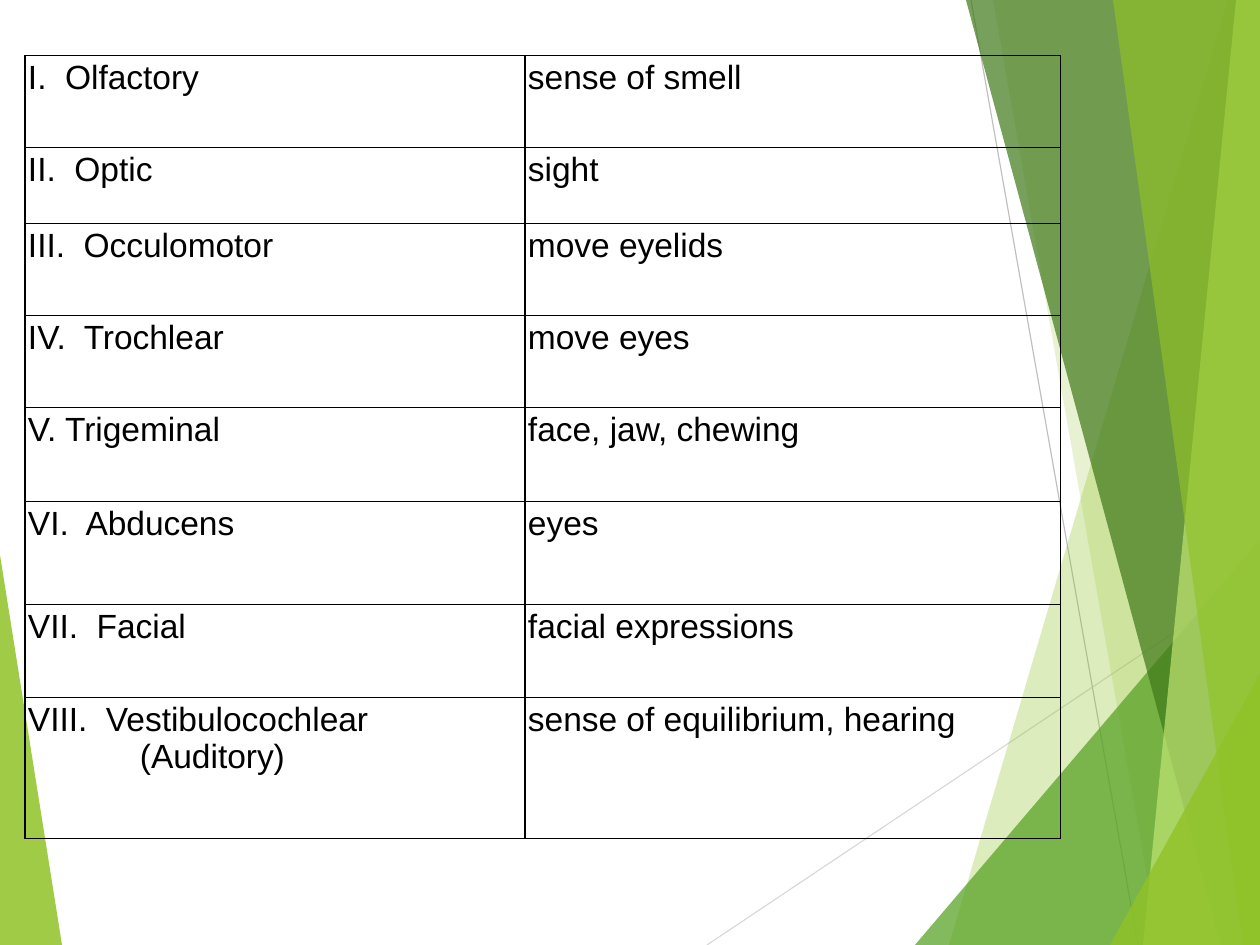
from lxml import etree
from pptx import Presentation
from pptx.dml.color import RGBColor
from pptx.enum.shapes import MSO_CONNECTOR
from pptx.oxml import parse_xml
from pptx.oxml.ns import nsdecls, qn
from pptx.util import Pt

PX = 8064  # EMU per px
WIDTH, HEIGHT = 1260, 945
STRAIGHT = MSO_CONNECTOR.STRAIGHT

BLACK = RGBColor(0x00, 0x00, 0x00)
LIME = RGBColor(0x90, 0xC2, 0x26)
GREEN = RGBColor(0x54, 0xA0, 0x21)
DARK_GREEN = RGBColor(0x3F, 0x78, 0x19)
PALE_LIME = RGBColor(0xC0, 0xE4, 0x74)
LIGHT_GRAY = RGBColor(0xD9, 0xD9, 0xD9)
GRAY = RGBColor(0xBF, 0xBF, 0xBF)

prs = Presentation()
prs.slide_width = WIDTH * PX
prs.slide_height = HEIGHT * PX
slide = prs.slides.add_slide(prs.slide_layouts[6])


def add_facet(corners, color, opacity):
    """Draw a see-through polygon; opacity is in percent."""
    builder = slide.shapes.build_freeform(*corners[0], scale=PX)
    builder.add_line_segments(corners[1:], close=True)
    facet = builder.convert_to_shape()
    facet.shadow.inherit = False
    facet.line.fill.background()
    facet.fill.solid()
    facet.fill.fore_color.rgb = color
    rgb = facet.fill._xPr.find(".//" + qn("a:srgbClr"))
    etree.SubElement(rgb, qn("a:alpha")).set("val", str(opacity * 1000))


# Background facets and hairlines
add_facet([(0, 555), (62, HEIGHT), (0, HEIGHT)], LIME, 85)

for start, end, color in [
    ((707, 945), (1260, 575), LIGHT_GRAY),
    ((971, 0), (1138, 945), GRAY),
]:
    hairline = slide.shapes.add_connector(
        STRAIGHT, *(v * PX for v in start + end))
    hairline.line.color.rgb = color
    hairline.line.width = Pt(0.75)
    etree.SubElement(hairline._element.spPr, qn("a:effectLst"))

# Each facet runs from its left edge to the right side of the slide
for top, bottom, color, opacity in [
    ((1228, 0), (949, HEIGHT), LIME, 30),
    ((993, 0), (1159, HEIGHT), LIME, 20),
    ((WIDTH, 540), (915, HEIGHT), GREEN, 72),
    ((966, 0), (1221, HEIGHT), DARK_GREEN, 70),
    ((1236, 0), (1143, HEIGHT), PALE_LIME, 70),
    ((1113, 0), (1243, HEIGHT), LIME, 65),
    ((WIDTH, 674), (1110, HEIGHT), LIME, 80),
]:
    add_facet([top, bottom, (WIDTH, HEIGHT), (WIDTH, top[1])], color, opacity)

# Cranial nerves: name, function, row height
nerves = [
    ("I.  Olfactory", "sense of smell", 92),
    ("II.  Optic", "sight", 76),
    ("III.  Occulomotor", "move eyelids", 92),
    ("IV.  Trochlear", "move eyes", 92),
    ("V. Trigeminal", "face, jaw, chewing", 94),
    ("VI.  Abducens", "eyes", 103),
    ("VII.  Facial", "facial expressions", 93),
    ("VIII.  Vestibulocochlear\n(Auditory)", "sense of equilibrium, hearing", 141),
]
column_widths = [500, 536]
table_height = sum(height for _, _, height in nerves)
nerve_table = slide.shapes.add_table(
    len(nerves), 2, 25 * PX, 56 * PX,
    sum(column_widths) * PX, table_height * PX).table
nerve_table.first_row = False
nerve_table.horz_banding = False
for column, width in zip(nerve_table.columns, column_widths):
    column.width = width * PX

for row, (nerve, function, height) in zip(nerve_table.rows, nerves):
    row.height = height * PX
    for cell, text in zip(row.cells, (nerve, function)):
        cell.text = text
        cell.margin_left = cell.margin_right = 3 * PX
        cell.margin_top = cell.margin_bottom = 3 * PX
        cell.fill.background()
        for paragraph in cell.text_frame.paragraphs:
            paragraph.font.name = "Arial"
            paragraph.font.size = Pt(21.3)
            paragraph.font.color.rgb = BLACK
        cell_properties = cell._tc.get_or_add_tcPr()
        for position, side in enumerate(("lnL", "lnR", "lnT", "lnB")):
            cell_properties.insert(position, parse_xml(
                f'<a:{side} {nsdecls("a")} w="{Pt(0.75)}"><a:solidFill>'
                f'<a:srgbClr val="{BLACK}"/></a:solidFill></a:{side}>'))

auditory = nerve_table.cell(len(nerves) - 1, 0).text_frame.paragraphs[1]
auditory_properties = auditory._p.get_or_add_pPr()
auditory_properties.set("marL", str(112 * PX))
auditory_properties.set("indent", "0")

prs.save("out.pptx")
